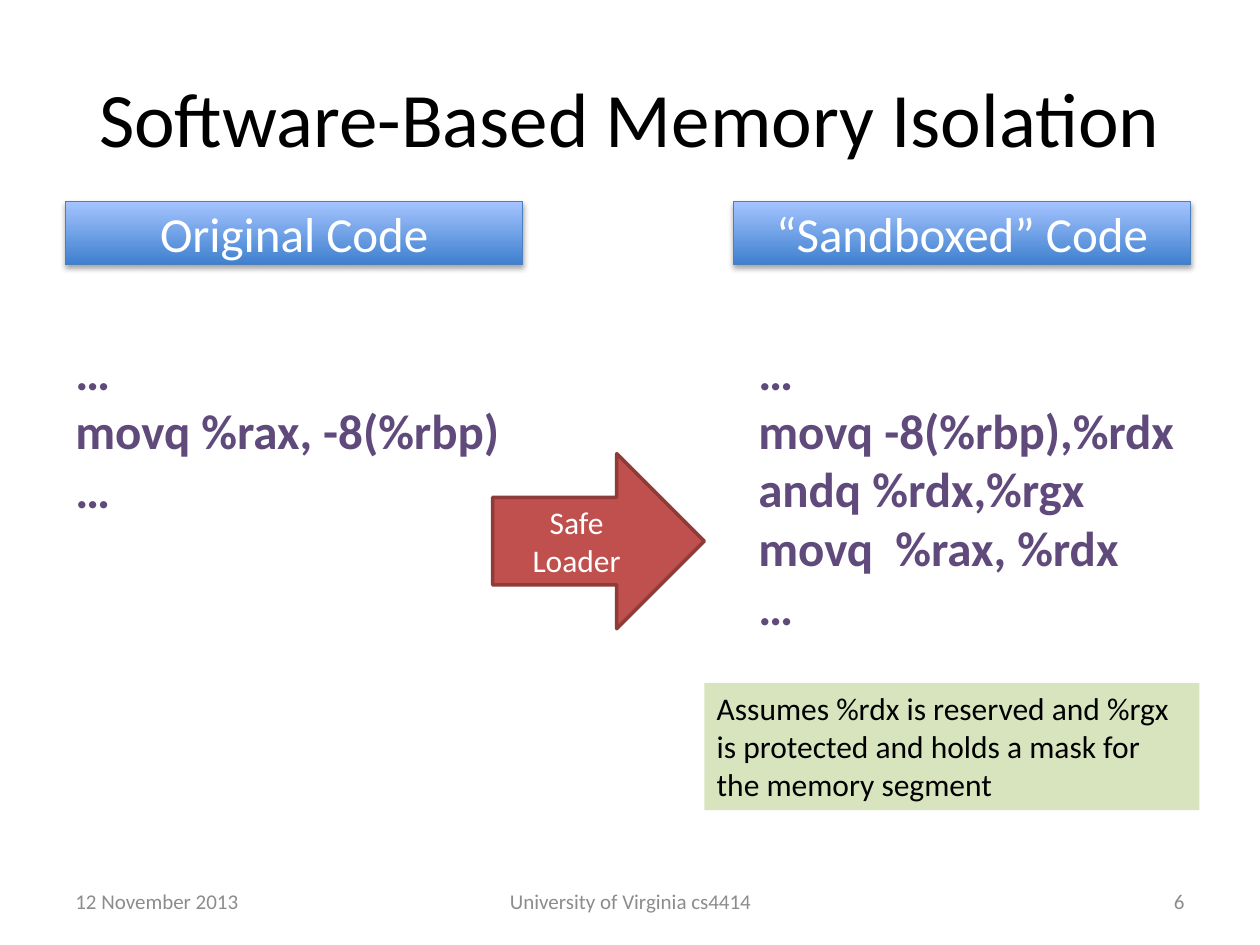
import pptx
import pptx.dml.color
import pptx.enum.shapes
import pptx.enum.text
import pptx.oxml
import pptx.oxml.ns
import pptx.util

Inches = pptx.util.Inches
Pt = pptx.util.Pt
ALIGN = pptx.enum.text.PP_ALIGN
ANCHOR = pptx.enum.text.MSO_ANCHOR
SHAPE = pptx.enum.shapes.MSO_SHAPE

COLORS = {
    "title": "000000",
    "footer": "8C8C8C",
    "code": "604A7B",
    "white": "FFFFFF",
    "header_dark": "3F80CE",
    "header_light": "A4C4FF",
    "header_line": "4B7EBC",
    "arrow": "C0504D",
    "arrow_line": "8E3B39",
    "note": "D7E4BD",
}
SHADOW = (
    '<a:outerShdw {} blurRad="39370" dist="22860" dir="5400000" rotWithShape="0">'
    '<a:srgbClr val="000000"><a:alpha val="35000"/></a:srgbClr></a:outerShdw>'
).format(pptx.oxml.ns.nsdecls("a"))


def rgb(name):
    return pptx.dml.color.RGBColor.from_string(COLORS[name])


def write(sp, lines, size, color, align=ALIGN.LEFT, anchor=ANCHOR.MIDDLE, wrap=True, bold=False):
    tf = sp.text_frame
    for name, value in {"word_wrap": wrap, "vertical_anchor": anchor}.items():
        setattr(tf, name, value)
    for i, line in enumerate(lines):
        p = tf.paragraphs[0] if i == 0 else tf.add_paragraph()
        p.alignment = align
        r = p.add_run()
        r.text = line
        for name, value in {"name": "Calibri", "size": Pt(size), "bold": bold}.items():
            setattr(r.font, name, value)
        r.font.color.rgb = rgb(color)


def add_text(s, box, lines, size, color, **format_values):
    sp = s.shapes.add_textbox(*map(Inches, box))
    write(sp, lines, size, color, **format_values)


def add_box(s, kind, box, fill=None, line=None, width=0):
    sp = s.shapes.add_shape(kind, *map(Inches, box))
    sp.shadow.inherit = False
    if fill:
        sp.fill.solid()
        sp.fill.fore_color.rgb = rgb(fill)
    if line:
        sp.line.color.rgb = rgb(line)
        sp.line.width = Pt(width)
    else:
        sp.line.fill.background()
    return sp


def add_header(s, left, label):
    sp = add_box(s, SHAPE.RECTANGLE, (left, 1.6, 3.63, 0.5), line="header_line", width=0.75)
    sp.fill.gradient()
    sp.fill.gradient_angle = 90
    for stop, name in zip(sp.fill.gradient_stops, ("header_dark", "header_light")):
        stop.color.rgb = rgb(name)
    effects = sp._element.spPr.find(pptx.oxml.ns.qn("a:effectLst"))
    effects.append(pptx.oxml.parse_xml(SHADOW))
    write(sp, [label], 28, "white", align=ALIGN.CENTER)


def add_code(s, box, lines):
    add_text(s, box, lines, 28, "code", anchor=ANCHOR.TOP, wrap=False, bold=True)


def add_footer(s, left, width, label, align):
    add_text(s, (left, 6.95, width, 0.4), [label], 12, "footer", align=align)


def main():
    prs = pptx.Presentation()
    prs.slide_width, prs.slide_height = Inches(10), Inches(7.5)
    s = prs.slides.add_slide(prs.slide_layouts[6])

    add_text(s, (0.5, 0.3, 9, 1.25), ["Software-Based Memory Isolation"], 44, "title", align=ALIGN.CENTER)
    add_footer(s, 0.5, 2.33, "12 November 2013", ALIGN.LEFT)
    add_footer(s, 3.42, 3.17, "University of Virginia cs4414", ALIGN.CENTER)
    add_footer(s, 7.17, 2.33, "6", ALIGN.RIGHT)

    add_code(s, (0.5, 2.66, 3.62, 1.51), ["…", "movq %rax, -8(%rbp)", "…"])
    add_header(s, 0.52, "Original Code")

    arrow = add_box(s, SHAPE.RIGHT_ARROW, (3.91, 3.6, 1.68, 1.39), "arrow", "arrow_line", 2)
    write(arrow, ["Safe Loader"], 18, "white", align=ALIGN.CENTER)

    add_code(s, (5.92, 2.66, 3.55, 2.46),
             ["…", "movq -8(%rbp),%rdx", "andq %rdx,%rgx", "movq  %rax, %rdx", "…"])
    add_header(s, 5.82, "“Sandboxed” Code")

    note = add_box(s, SHAPE.RECTANGLE, (5.59, 5.42, 3.93, 1.01), "note")
    write(note, ["Assumes %rdx is reserved and %rgx is protected and holds a mask for the memory segment"],
          18, "title", anchor=ANCHOR.TOP)

    prs.save("out.pptx")


if __name__ == "__main__":
    main()
